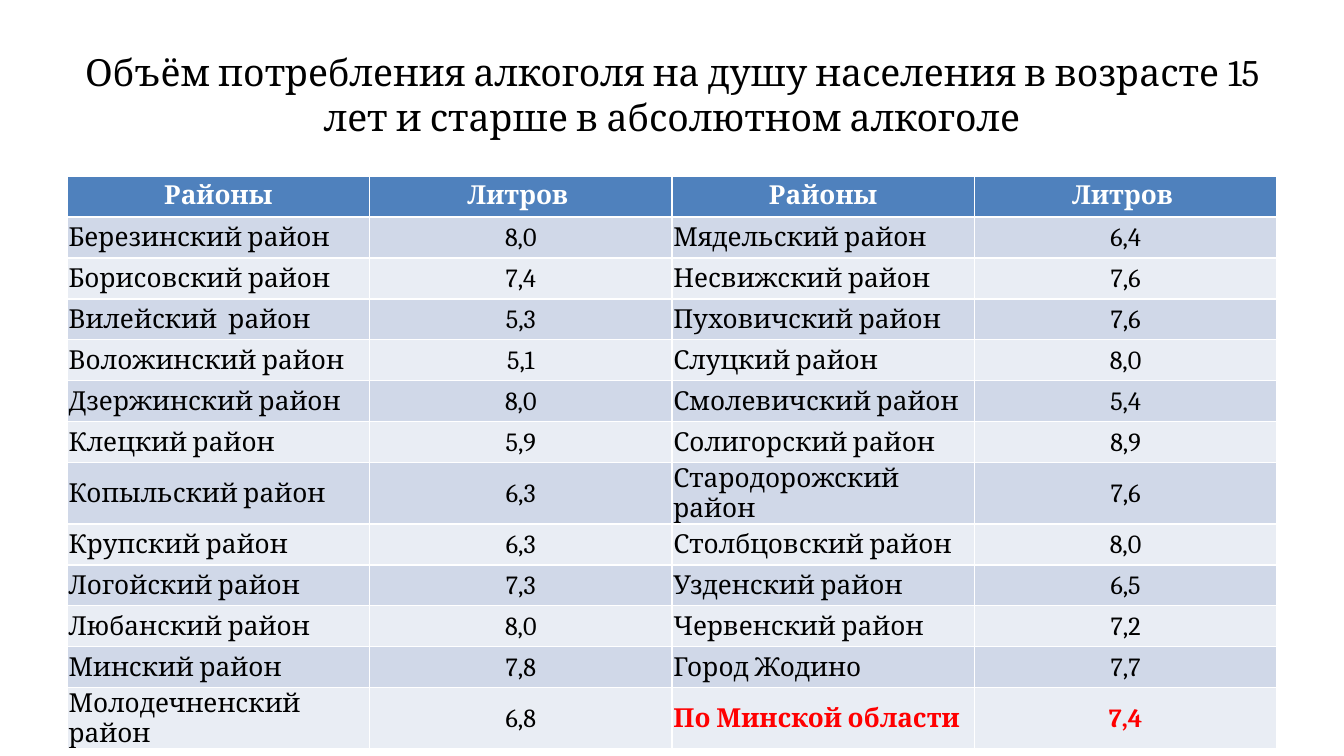
from pptx import Presentation, util as u
from pptx.dml.color import RGBColor
from pptx.enum import text

TITLE = "Объём потребления алкоголя на душу населения в возрасте 15 лет и старше в абсолютном алкоголе"
HEADINGS = ("Районы", "Литров ") * 2
DISTRICTS = [
    ("Березинский район", "8,0", "Мядельский район", "6,4"),
    ("Борисовский район", "7,4", "Несвижский район", "7,6"),
    ("Вилейский  район", "5,3", "Пуховичский район", "7,6"),
    ("Воложинский район", "5,1", "Слуцкий район", "8,0"),
    ("Дзержинский район", "8,0", "Смолевичский район", "5,4"),
    ("Клецкий район", "5,9", "Солигорский район", "8,9"),
    ("Копыльский район", "6,3", "Стародорожский район", "7,6"),
    ("Крупский район", "6,3", "Столбцовский район", "8,0"),
    ("Логойский район", "7,3", "Узденский район", "6,5"),
    ("Любанский район", "8,0", "Червенский район", "7,2"),
    ("Минский район", "7,8", "Город Жодино", "7,7"),
    ("Молодечненский район", "6,8", "По Минской области", "7,4"),
]
THEME = {
    "font": "Cambria", "title_size": 20, "table_size": 14,
    "ink": "000000", "heading_ink": "FFFFFF", "total_ink": "FF0000",
    "heading_fill": "4F81BD", "bands": ("E9EDF4", "D0D8E8"),
}
SLIDE_WIDTH = 10
SLIDE_HEIGHT = SLIDE_WIDTH * 9 / 16
LEFT, WIDTH = 0.5, 9
HEADING_MARGINS = (0.1, 0.04, 0.1, 0.04)
DISTRICT_MARGINS = (0.01, 0.01, 0.01, 0)


def format_text(paragraph, size, color, bold=False, centred=True):
    paragraph.alignment = text.PP_ALIGN.CENTER if centred else text.PP_ALIGN.LEFT
    paragraph.font.name = THEME["font"]
    paragraph.font.size = u.Pt(size)
    paragraph.font.bold = bold
    paragraph.font.color.rgb = RGBColor.from_string(color)


def fill_cell(cell, words, fill, color, bold, centred, margins):
    cell.text = words
    cell.fill.solid()
    cell.fill.fore_color.rgb = RGBColor.from_string(fill)
    (cell.margin_left, cell.margin_top,
     cell.margin_right, cell.margin_bottom) = map(u.Inches, margins)
    format_text(cell.text_frame.paragraphs[0], THEME["table_size"], color, bold, centred)


def main():
    deck = Presentation()
    deck.slide_width, deck.slide_height = u.Inches(SLIDE_WIDTH), u.Inches(SLIDE_HEIGHT)
    slide = deck.slides.add_slide(deck.slide_layouts[5])

    title = slide.shapes.title
    title.left, title.top = u.Inches(LEFT), u.Inches(0.23)
    title.width, title.height = u.Inches(WIDTH), u.Inches(0.94)
    title.text = TITLE
    title.text_frame.auto_size = text.MSO_AUTO_SIZE.NONE
    title.text_frame.vertical_anchor = text.MSO_ANCHOR.MIDDLE
    format_text(title.text_frame.paragraphs[0], THEME["title_size"], THEME["ink"])

    consumption = slide.shapes.add_table(
        len(DISTRICTS) + 1, len(HEADINGS),
        u.Inches(LEFT), u.Inches(1.31), u.Inches(WIDTH), u.Inches(3.96)).table

    for column, heading in enumerate(HEADINGS):
        fill_cell(consumption.cell(0, column), heading, THEME["heading_fill"],
                  THEME["heading_ink"], True, True, HEADING_MARGINS)

    for row, values in enumerate(DISTRICTS, start=1):
        for column, value in enumerate(values):
            cell = consumption.cell(row, column)
            is_total = row == len(DISTRICTS) and column >= 2
            fill_cell(cell, value, THEME["bands"][row % 2],
                      THEME["total_ink" if is_total else "ink"],
                      is_total, column % 2 == 1, DISTRICT_MARGINS)
            cell.vertical_anchor = text.MSO_ANCHOR.MIDDLE

    deck.save("out.pptx")


if __name__ == "__main__":
    main()
